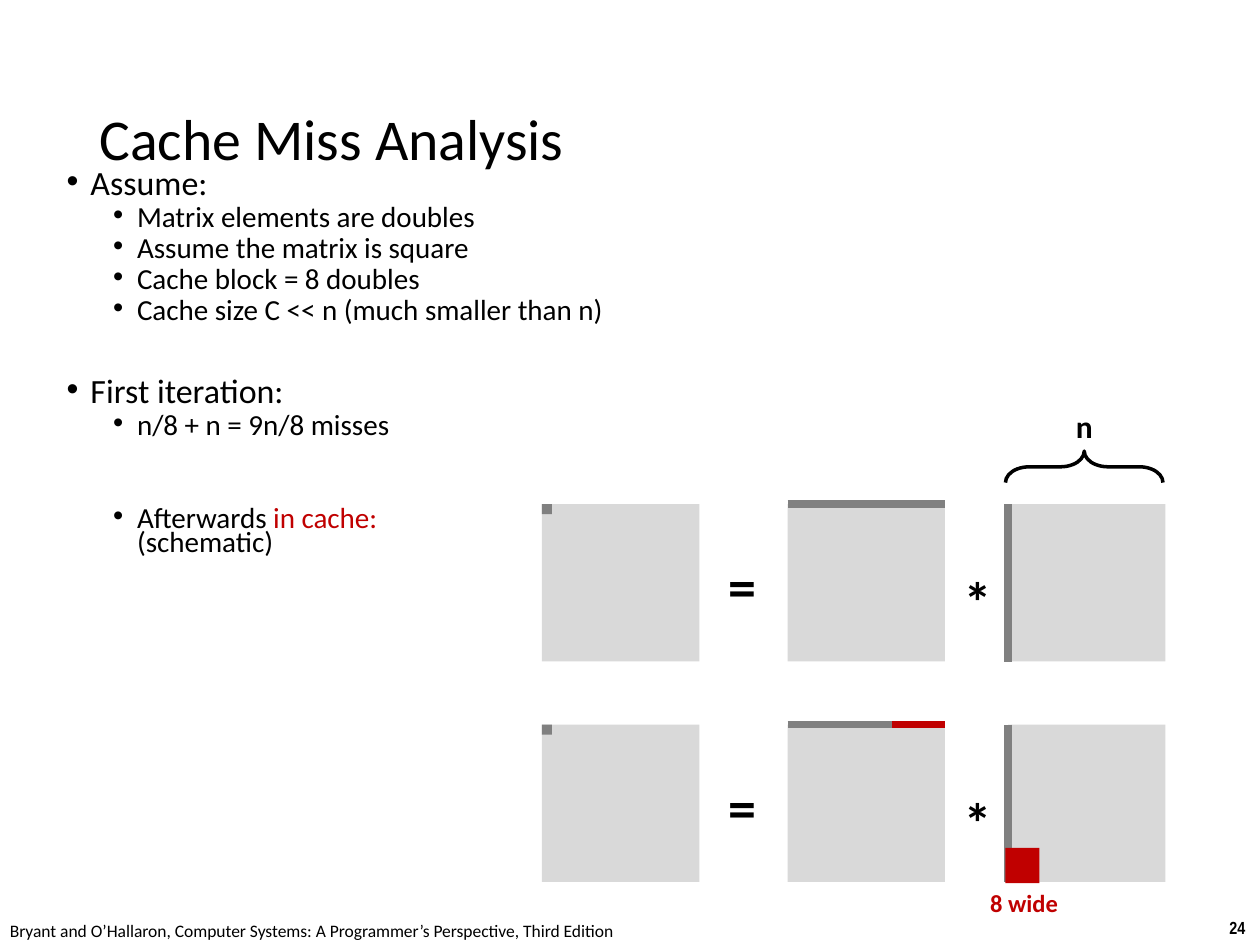
from lxml.etree import SubElement
from pptx import Presentation
from pptx.dml.color import RGBColor
from pptx.enum.shapes import MSO_CONNECTOR, MSO_SHAPE
from pptx.enum.text import MSO_ANCHOR
from pptx.oxml.ns import qn
from pptx.util import Inches, Pt

COLORS = {"ink": "000000", "matrix": "D9D9D9", "accessed": "808080", "cached": "C00000"}

prs = Presentation()
prs.slide_width, prs.slide_height = Inches(10), Inches(7.5)
slide = prs.slides.add_slide(prs.slide_layouts[6])
shapes = slide.shapes


def add_label(text, left, top, width, height, size, color="ink", bold=False, font="Calibri"):
    label = shapes.add_textbox(Inches(left), Inches(top), Inches(width), Inches(height))
    paragraph = label.text_frame.paragraphs[0]
    paragraph.text = text
    paragraph.font.name = font
    paragraph.font.size = Pt(size)
    paragraph.font.bold = bold
    paragraph.font.color.rgb = RGBColor.from_string(COLORS[color])
    return label


def add_block(left, top, width, height, color):
    block = shapes.add_shape(MSO_SHAPE.RECTANGLE, Inches(left), Inches(top), Inches(width), Inches(height))
    block.shadow.inherit = False
    block.fill.solid()
    block.fill.fore_color.rgb = RGBColor.from_string(COLORS[color])
    block.line.fill.background()


add_label("24", 9.66, 7.23, 0.34, 0.27, 10, bold=True, font="Arial Narrow")
add_label("Bryant and O’Hallaron, Computer Systems: A Programmer’s Perspective, Third Edition",
          -0.02, 7.25, 5.08, 0.27, 10)
title = add_label("Cache Miss Analysis", 0.69, 0.4, 8.62, 1.45, 33)
title.text_frame.word_wrap = True
title.text_frame.vertical_anchor = MSO_ANCHOR.MIDDLE
title.text_frame.paragraphs[0].line_spacing = 0.9

outline = shapes.add_textbox(Inches(0.43), Inches(1.32), Inches(8.64), Inches(3.34)).text_frame
outline.word_wrap = True
points = [
    (0, "Assume:", 7.5),
    (1, "Matrix elements are doubles", 3.8),
    (1, "Assume the matrix is square", 3.8),
    (1, "Cache block = 8 doubles", 3.8),
    (1, "Cache size C << n (much smaller than n)", 3.8),
    (0, "First iteration:", 31.5),
    (1, "n/8 + n = 9n/8 misses", 3.8),
    (1, "Afterwards ", 39.3),
]
for index, (level, text, space_before) in enumerate(points):
    point = outline.add_paragraph() if index else outline.paragraphs[0]
    point.text = text
    point.level = level
    point.line_spacing = 0.7
    point.space_before = Pt(space_before)
    point.font.name = "Calibri"
    point.font.size = Pt(16.6 if level else 19.4)
    point.font.color.rgb = RGBColor.from_string(COLORS["ink"])
    properties = point._p.get_or_add_pPr()
    properties.set("marL", str(Inches(0.56 if level else 0.19)))
    properties.set("indent", str(Inches(-0.19)))
    bullet_font = properties.makeelement(qn("a:buFont"), {"typeface": "Arial"})
    bullet = properties.makeelement(qn("a:buChar"), {"char": "•"})
    properties.find(qn("a:defRPr")).addprevious(bullet_font)
    bullet_font.addnext(bullet)

in_cache = point.add_run()
in_cache.text = "in cache:"
in_cache.font.color.rgb = RGBColor.from_string(COLORS["cached"])
point.add_line_break()
point.add_run().text = "(schematic)"
for run in point.runs:
    run.font.name = "Calibri"
    run.font.size = Pt(16.6)

SIDE = 1.25
RESULT, LEFT_FACTOR, RIGHT_FACTOR = 4.3, 6.25, 8
FIRST_ROW, SECOND_ROW = 4, 5.75
strips = []
for top in (FIRST_ROW, SECOND_ROW):
    for left in (RESULT, LEFT_FACTOR, RIGHT_FACTOR):
        add_block(left, top, SIDE, SIDE, "matrix")
    add_block(RESULT, top, 0.08, 0.08, "accessed")
    add_label("=", 5.68, top + 0.33, 0.43, 0.64, 32, bold=True)
    add_label("*", 7.55, top + 0.45, 0.43, 0.64, 32, bold=True)
    strips += [(LEFT_FACTOR, top, LEFT_FACTOR + SIDE, top, "accessed"),
               (RIGHT_FACTOR, top, RIGHT_FACTOR, top + SIDE, "accessed")]
strips.append((7.08, SECOND_ROW, LEFT_FACTOR + SIDE, SECOND_ROW, "cached"))

for *ends, color in strips:
    strip = shapes.add_connector(MSO_CONNECTOR.STRAIGHT, *map(Inches, ends))
    strip.line.width = Pt(4.5)
    strip.line.color.rgb = RGBColor.from_string(COLORS[color])
    SubElement(strip._element.spPr, qn("a:effectLst"))

brace = shapes.add_shape(MSO_SHAPE.LEFT_BRACE, Inches(8.48), Inches(3.08), Inches(0.25), Inches(SIDE))
brace.shadow.inherit = False
brace.rotation = 90
brace.adjustments[0] = 0.75
brace.fill.background()
brace.line.width = Pt(2)
brace.line.color.rgb = RGBColor.from_string(COLORS["ink"])
add_label("n", 8.44, 3.18, 0.34, 0.4, 18, bold=True)

add_block(7.98, 6.73, 0.27, 0.28, "cached")
add_label("8 wide", 7.76, 7, 0.74, 0.34, 14, "cached", bold=True)

prs.save("out.pptx")
